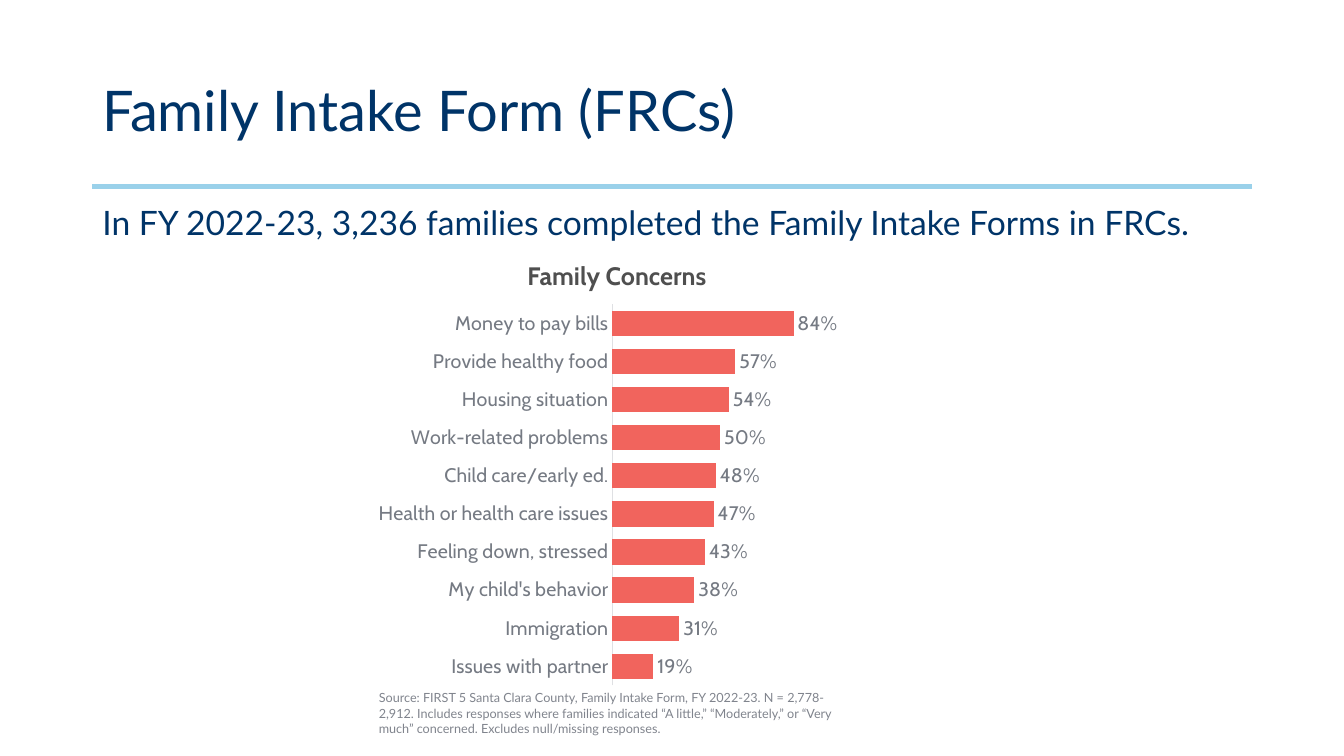
from lxml import etree
from pptx import Presentation
from pptx import util as u
from pptx.chart.data import CategoryChartData
from pptx.dml.color import RGBColor
from pptx.enum import chart as charts, shapes, text
from pptx.oxml import parse_xml
from pptx.oxml.ns import nsdecls, qn

COLORS = {
    "navy": "003468", "sky": "9AD1EA", "coral": "F1645D", "heading": "4F4F4F",
    "label": "757A83", "source": "80848D", "axis": "DFE0E3",
}
CONCERNS = {
    "Money to pay bills": 0.84,
    "Provide healthy food": 0.57,
    "Housing situation": 0.54,
    "Work-related problems": 0.50,
    "Child care/early ed.": 0.48,
    "Health or health care issues": 0.47,
    "Feeling down, stressed": 0.43,
    "My child's behavior": 0.38,
    "Immigration": 0.31,
    "Issues with partner": 0.19,
}

# Slide on a grid of 160 columns by 90 rows
deck = Presentation()
deck.slide_width, deck.slide_height = u.Inches(13.33), u.Inches(7.5)
COL, ROW = deck.slide_width / 160, deck.slide_height / 90
page = deck.slides.add_slide(deck.slide_layouts[1])


def grid(left, top, width, height):
    return [round(n * unit) for n, unit in
            ((left, COL), (top, ROW), (width, COL), (height, ROW))]


def write(box, area, words, size, color, face="Lato", align=text.PP_ALIGN.LEFT,
          anchor=text.MSO_ANCHOR.TOP):
    box.left, box.top, box.width, box.height = grid(*area)
    frame = box.text_frame
    frame.word_wrap = True
    frame.auto_size = text.MSO_AUTO_SIZE.NONE
    frame.vertical_anchor = anchor
    para = frame.paragraphs[0]
    para.alignment = align
    para.space_before = u.Pt(0)
    span = para.add_run()
    span.text = words
    span.font.size = u.Pt(size)
    span.font.name = face
    span.font.color.rgb = RGBColor.from_string(COLORS[color])
    return para


# Rule under the title
left, top, width, _ = grid(11, 22.2, 138, 0)
rule = page.shapes.add_connector(shapes.MSO_CONNECTOR.STRAIGHT, left, top, left + width, top)
rule.line.color.rgb = RGBColor.from_string(COLORS["sky"])
rule.line.width = u.Pt(3)
etree.SubElement(rule._element.spPr, qn("a:effectLst"))

# Title and lead sentence
title = write(page.shapes.title, (11, 4.8, 138, 17.4), "Family Intake Form (FRCs)",
              40, "navy", anchor=text.MSO_ANCHOR.MIDDLE)
title.line_spacing = 0.9
body = page.placeholders[1]
props = body.text_frame.paragraphs[0]._p.get_or_add_pPr()
props.set("marL", "0")
props.set("indent", "0")
etree.SubElement(props, qn("a:buNone"))
lead = write(body, (11, 24, 138, 56.8),
             "In FY 2022-23, 3,236 families completed the Family Intake Forms in FRCs.",
             24, "navy")
lead.line_spacing = 0.9

# Bar chart of concerns
data = CategoryChartData(number_format="0%")
data.categories = list(CONCERNS)
data.add_series("Series 1", list(CONCERNS.values()))
chart = page.shapes.add_chart(charts.XL_CHART_TYPE.BAR_CLUSTERED,
                              *grid(43.92, 35.28, 55.8, 47.28), data).chart
chart.has_legend = False
chart.has_title = False
chart.font.size = u.Pt(14)
chart.font.name = "Cabin"
chart.font.color.rgb = RGBColor.from_string(COLORS["label"])

names = chart.category_axis
names.reverse_order = True
names.major_tick_mark = charts.XL_TICK_MARK.NONE
names.format.line.color.rgb = RGBColor.from_string(COLORS["axis"])
names.format.line.width = u.Pt(0.75)
scale = chart.value_axis
scale.minimum_scale, scale.maximum_scale = 0, 1
scale.has_major_gridlines = False
scale.visible = False

plot = chart.plots[0]
plot.gap_width = 50
plot.vary_by_categories = False
bars = plot.series[0].format.fill
bars.solid()
bars.fore_color.rgb = RGBColor.from_string(COLORS["coral"])
plot.has_data_labels = True
labels = plot.data_labels
labels.show_value = True
labels.number_format = "0%"
labels.number_format_is_linked = False
labels.position = charts.XL_LABEL_POSITION.OUTSIDE_END

# Plot area as shares of the chart frame
layout = parse_xml(f'<c:layout {nsdecls("c")}><c:manualLayout/></c:layout>')
for tag, value in (("layoutTarget", "inner"), ("xMode", "edge"), ("yMode", "edge"),
                   ("x", 0.52), ("y", 0.02), ("w", 0.46), ("h", 0.96)):
    etree.SubElement(layout[0], qn(f"c:{tag}")).set("val", str(value))
area = chart._chartSpace.chart.plotArea
for old in area.findall(qn("c:layout")):
    area.remove(old)
area.insert(0, layout)

# Chart heading and source note
heading = write(page.shapes.add_textbox(0, 0, 0, 0), (49.08, 30.36, 48.72, 4.8),
                "Family Concerns", 18, "heading", "Cabin", text.PP_ALIGN.CENTER)
heading.runs[0].font.bold = True
write(page.shapes.add_textbox(0, 0, 0, 0), (43.92, 81.6, 59.04, 6.72),
      "Source: FIRST 5 Santa Clara County, Family Intake Form, FY 2022-23. N = 2,778-2,912. "
      "Includes responses where families indicated “A little,” “Moderately,” or “Very much” "
      "concerned. Excludes null/missing responses.", 9, "source")

deck.save("out.pptx")
